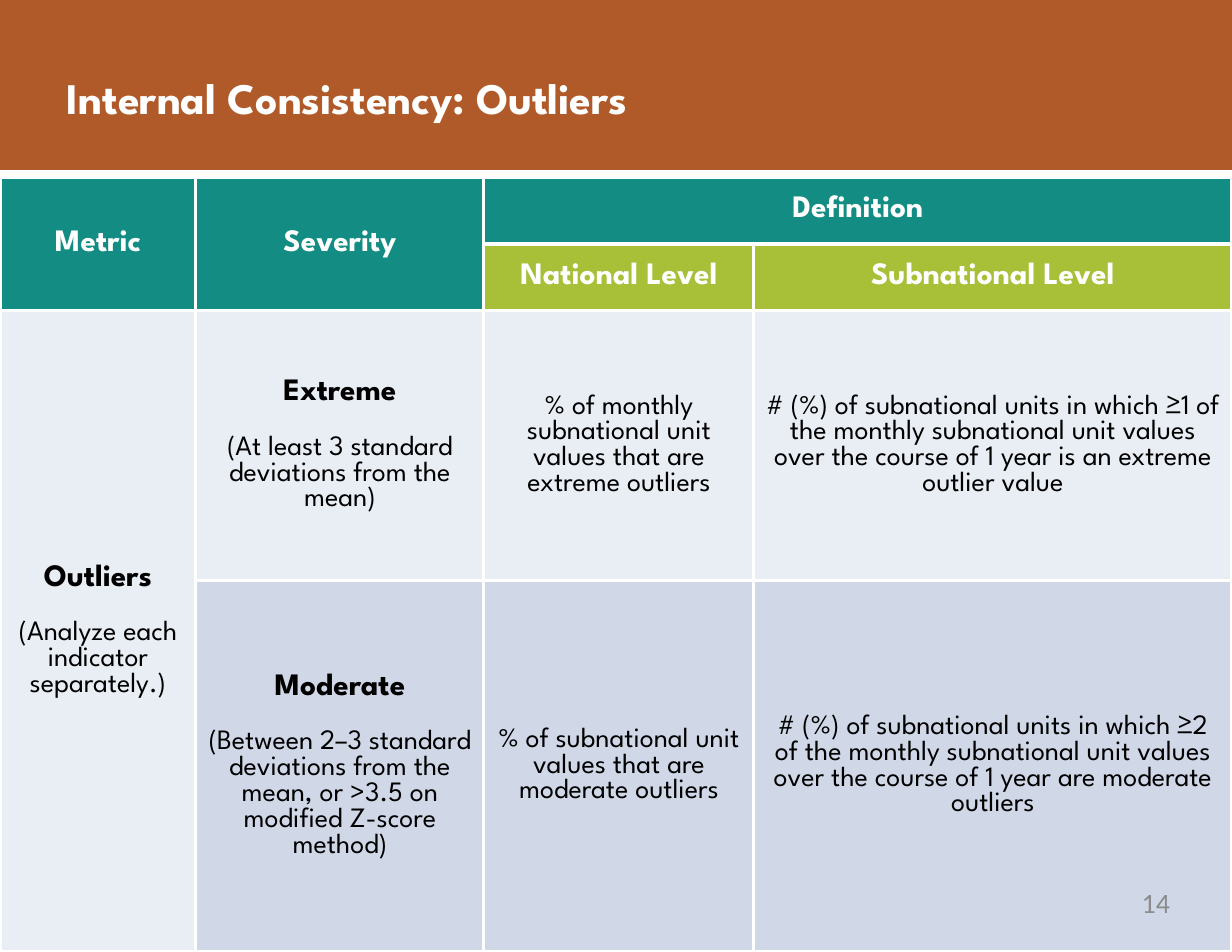
import lxml.etree
import pptx
import pptx.dml.color
import pptx.enum.shapes
import pptx.enum.text
import pptx.oxml.ns
import pptx.util

RGBColor = pptx.dml.color.RGBColor
ALIGN = pptx.enum.text.PP_ALIGN
ANCHOR = pptx.enum.text.MSO_ANCHOR

EMU_PER_PX = 914400 // 112
SLIDE_WIDTH, SLIDE_HEIGHT = 1232, 952
BORDER_POINTS = 2.25

RUST = RGBColor(0xB0, 0x5A, 0x2A)
TEAL = RGBColor(0x13, 0x8D, 0x84)
LIME = RGBColor(0xA7, 0xC0, 0x38)
PALE = RGBColor(0xE9, 0xED, 0xF4)
BLUE = RGBColor(0xD0, 0xD8, 0xE8)
WHITE = RGBColor(0xFF, 0xFF, 0xFF)
BLACK = RGBColor(0, 0, 0)
GRAY = RGBColor(0x8C, 0x8C, 0x8C)

TITLE = {"name": "League Spartan", "size": 28, "bold": True, "color": WHITE}
HEADER = {**TITLE, "size": 20}
TERM = {**HEADER, "color": BLACK}
DETAIL = {**TERM, "size": 18, "bold": False}
PAGE_NUMBER = {"name": "Calibri", "size": 18, "bold": False, "color": GRAY}

COLUMN_WIDTHS = [196, 288, 270, 478]
ROW_HEIGHTS = [67, 67, 270, 371]
MERGES = [(0, 0, 1, 0), (0, 1, 1, 1), (0, 2, 0, 3), (2, 0, 3, 0)]
FILLS = [
    [TEAL] * 4,
    [TEAL, TEAL, LIME, LIME],
    [PALE] * 4,
    [PALE, BLUE, BLUE, BLUE],
]
HEADERS = {
    (0, 0): "Metric",
    (0, 1): "Severity",
    (0, 2): "Definition",
    (1, 2): "National Level",
    (1, 3): "Subnational Level",
}
TERMS = {
    (2, 0): ("Outliers", "(Analyze each indicator separately.)"),
    (2, 1): ("Extreme", "(At least 3 standard deviations from the mean)"),
    (3, 1): ("Moderate", "(Between 2–3 standard deviations from the mean, "
                         "or >3.5 on modified Z-score method)"),
}
DEFINITIONS = {
    (2, 2): "% of monthly subnational unit values that are extreme outliers",
    (2, 3): "# (%) of subnational units in which ≥1 of the monthly subnational "
            "unit values over the course of 1 year is an extreme outlier value",
    (3, 2): "% of subnational unit values that are moderate outliers",
    (3, 3): "# (%) of subnational units in which ≥2 of the monthly subnational "
            "unit values over the course of 1 year are moderate outliers",
}


def px(length):
    return pptx.util.Emu(length * EMU_PER_PX)


def set_attributes(target, values):
    for name, value in values.items():
        setattr(target, name, value)


def write_paragraph(paragraph, text, style, alignment):
    paragraph.alignment = alignment
    run = paragraph.add_run()
    run.text = text
    set_attributes(run.font, {
        "name": style["name"],
        "size": pptx.util.Pt(style["size"]),
        "bold": style["bold"],
    })
    run.font.color.rgb = style["color"]


def add_band(slide, left, top, width, height, color):
    band = slide.shapes.add_shape(
        pptx.enum.shapes.MSO_SHAPE.RECTANGLE,
        px(left), px(top), px(width), px(height))
    band.shadow.inherit = False
    band.fill.solid()
    band.fill.fore_color.rgb = color
    band.line.fill.background()


def add_text(slide, box, text, style, alignment, top_inset=0):
    frame = slide.shapes.add_textbox(*map(px, box)).text_frame
    set_attributes(frame, {
        "word_wrap": True,
        "vertical_anchor": ANCHOR.TOP,
        "margin_left": 0,
        "margin_right": 0,
        "margin_top": px(top_inset),
        "margin_bottom": 0,
    })
    write_paragraph(frame.paragraphs[0], text, style, alignment)


def add_borders(cell, color):
    properties = cell._tc.get_or_add_tcPr()
    qn = pptx.oxml.ns.qn
    for index, side in enumerate(("lnL", "lnR", "lnT", "lnB")):
        line = lxml.etree.Element(qn(f"a:{side}"), w=str(pptx.util.Pt(BORDER_POINTS)))
        fill = lxml.etree.SubElement(line, qn("a:solidFill"))
        lxml.etree.SubElement(fill, qn("a:srgbClr"), val=str(color))
        properties.insert(index, line)


def write_cell(cell, entries):
    frame = cell.text_frame
    for index, (text, style) in enumerate(entries):
        paragraph = frame.add_paragraph() if index else frame.paragraphs[0]
        if index:
            paragraph.space_before = pptx.util.Pt(18)
        write_paragraph(paragraph, text, style, ALIGN.CENTER)


def add_outlier_table(slide, left, top):
    table = slide.shapes.add_table(
        len(ROW_HEIGHTS), len(COLUMN_WIDTHS), px(left), px(top),
        px(sum(COLUMN_WIDTHS)), px(sum(ROW_HEIGHTS))).table
    set_attributes(table, {"first_row": False, "horz_banding": False})
    for column, width in zip(table.columns, COLUMN_WIDTHS):
        column.width = px(width)
    for row, height in zip(table.rows, ROW_HEIGHTS):
        row.height = px(height)
    for row, colors in enumerate(FILLS):
        for column, color in enumerate(colors):
            cell = table.cell(row, column)
            cell.vertical_anchor = ANCHOR.MIDDLE
            cell.fill.solid()
            cell.fill.fore_color.rgb = color
            add_borders(cell, WHITE)
    for first_row, first_column, last_row, last_column in MERGES:
        table.cell(first_row, first_column).merge(table.cell(last_row, last_column))
    for position, text in HEADERS.items():
        write_cell(table.cell(*position), [(text, HEADER)])
    for position, (term, detail) in TERMS.items():
        write_cell(table.cell(*position), [(term, TERM), (detail, DETAIL)])
    for position, text in DEFINITIONS.items():
        write_cell(table.cell(*position), [(text, DETAIL)])


def main():
    presentation = pptx.Presentation()
    set_attributes(presentation, {
        "slide_width": px(SLIDE_WIDTH),
        "slide_height": px(SLIDE_HEIGHT),
    })
    slide = presentation.slides.add_slide(presentation.slide_layouts[6])
    add_band(slide, 0, 0, SLIDE_WIDTH, 170, RUST)
    add_text(slide, (67, 56, 1109, 53), "Internal Consistency: Outliers",
             TITLE, ALIGN.LEFT, top_inset=15)
    add_outlier_table(slide, 0, 177)
    add_text(slide, (887, 886, 283, 47), "14", PAGE_NUMBER, ALIGN.RIGHT)
    presentation.save("out.pptx")


if __name__ == "__main__":
    main()
